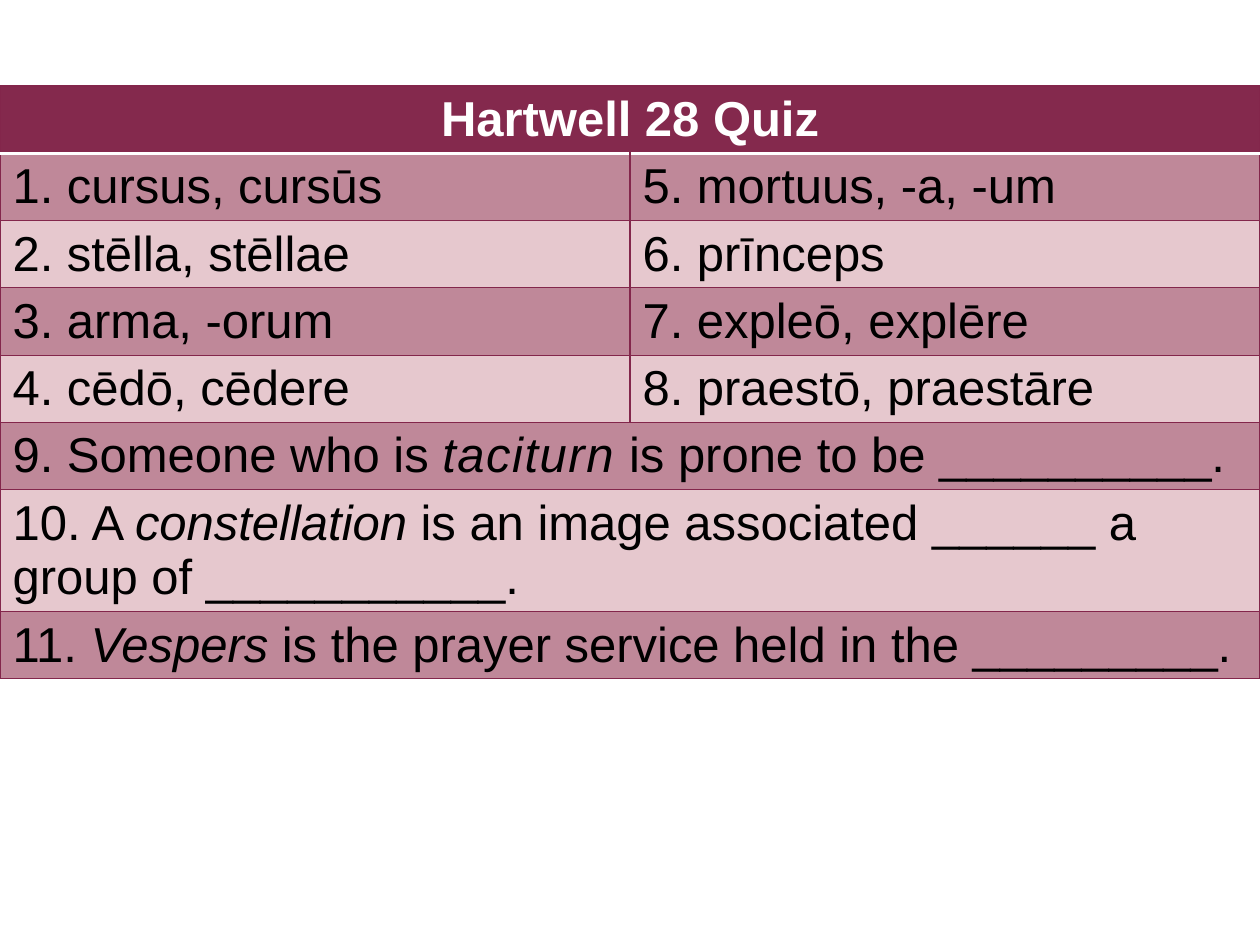
"""Build the Latin chapter 28 quiz slide as one banded table."""
from dataclasses import dataclass

from lxml.etree import SubElement
from pptx import Presentation
from pptx.dml.color import RGBColor
from pptx.enum.text import PP_ALIGN as Align
from pptx.oxml.ns import qn
from pptx.table import Table, _Cell as Cell
from pptx.util import Emu, Pt

EMU_PER_PX = 914400 / 126


@dataclass(frozen=True)
class Theme:
    font: str = "Arial"
    size: int = 28
    header: str = "84294D"
    dark_band: str = "BF8899"
    light_band: str = "E6C8CE"
    border: str = "83264B"
    header_text: str = "FFFFFF"
    body_text: str = "000000"
    border_width: float = 0.75
    header_rule_width: float = 2


@dataclass(frozen=True)
class Span:
    text: str
    italic: bool = False
    spacing: int = 0


@dataclass(frozen=True)
class Row:
    cells: tuple[tuple[Span, ...], ...]


THEME = Theme()
SLIDE_WIDTH, SLIDE_HEIGHT = 1260, 945
TABLE_TOP, ROW_HEIGHT, COLUMNS = 86, 64, 2

TITLE = Row(((Span("Hartwell 28 Quiz"),),))
WORDS = (
    ("1. cursus, cursūs", "5. mortuus, -a, -um"),
    ("2. stēlla, stēllae", "6. prīnceps"),
    ("3. arma, -orum", "7. expleō, explēre"),
    ("4. cēdō, cēdere", "8. praestō, praestāre"),
)
SENTENCES = (
    (Span("9. Someone who is "), Span("taciturn", italic=True, spacing=90),
     Span(" is prone to be __________.")),
    (Span("10. A "), Span("constellation", italic=True),
     Span(" is an image associated ______ a group of ___________.")),
    (Span("11. "), Span("Vespers", italic=True),
     Span(" is the prayer service held in the _________.")),
)
ROWS = (
    TITLE,
    *(Row(tuple((Span(word),) for word in pair)) for pair in WORDS),
    *(Row((sentence,)) for sentence in SENTENCES),
)


def px(length: int) -> Emu:
    return Emu(round(length * EMU_PER_PX))


def add_border(cell: Cell, side: str, *, color: str, width: float) -> None:
    line = SubElement(cell._tc.get_or_add_tcPr(), qn(f"a:ln{side}"), w=str(Pt(width)))
    fill = SubElement(line, qn("a:solidFill"))
    SubElement(fill, qn("a:srgbClr"), val=color)


def write_text(cell: Cell, spans: tuple[Span, ...], *, color: str,
               bold: bool = False, align: Align = Align.LEFT) -> None:
    para = cell.text_frame.paragraphs[0]
    para.alignment = align
    for span in spans:
        run = para.add_run()
        run.text = span.text
        run.font.name = THEME.font
        run.font.size = Pt(THEME.size)
        run.font.bold = bold
        run.font.italic = span.italic
        run.font.color.rgb = RGBColor.from_string(color)
        if span.spacing:
            run.font._element.set("spc", str(span.spacing))


def style_cell(cell: Cell, row_index: int) -> None:
    rule_side = {0: "B", 1: "T"}.get(row_index)
    for side in "LRTB":
        if side == rule_side:
            add_border(cell, side, color=THEME.header_text, width=THEME.header_rule_width)
        else:
            add_border(cell, side, color=THEME.border, width=THEME.border_width)
    band = THEME.dark_band if row_index % 2 else THEME.light_band
    cell.fill.solid()
    cell.fill.fore_color.rgb = RGBColor.from_string(band if row_index else THEME.header)


def fill_row(table: Table, row_index: int, row: Row) -> None:
    table.rows[row_index].height = px(ROW_HEIGHT)
    for column in range(COLUMNS):
        style_cell(table.cell(row_index, column), row_index)
    if len(row.cells) == 1:
        table.cell(row_index, 0).merge(table.cell(row_index, COLUMNS - 1))
    for column, spans in enumerate(row.cells):
        cell = table.cell(row_index, column)
        if row_index:
            write_text(cell, spans, color=THEME.body_text)
        else:
            write_text(cell, spans, color=THEME.header_text, bold=True, align=Align.CENTER)


def main() -> None:
    deck = Presentation()
    deck.slide_width, deck.slide_height = px(SLIDE_WIDTH), px(SLIDE_HEIGHT)
    page = deck.slides.add_slide(deck.slide_layouts[6])
    table = page.shapes.add_table(
        len(ROWS), COLUMNS, px(0), px(TABLE_TOP), px(SLIDE_WIDTH), px(ROW_HEIGHT * len(ROWS))
    ).table
    table.horz_banding = False
    for row_index, row in enumerate(ROWS):
        fill_row(table, row_index, row)
    deck.save("out.pptx")


if __name__ == "__main__":
    main()
